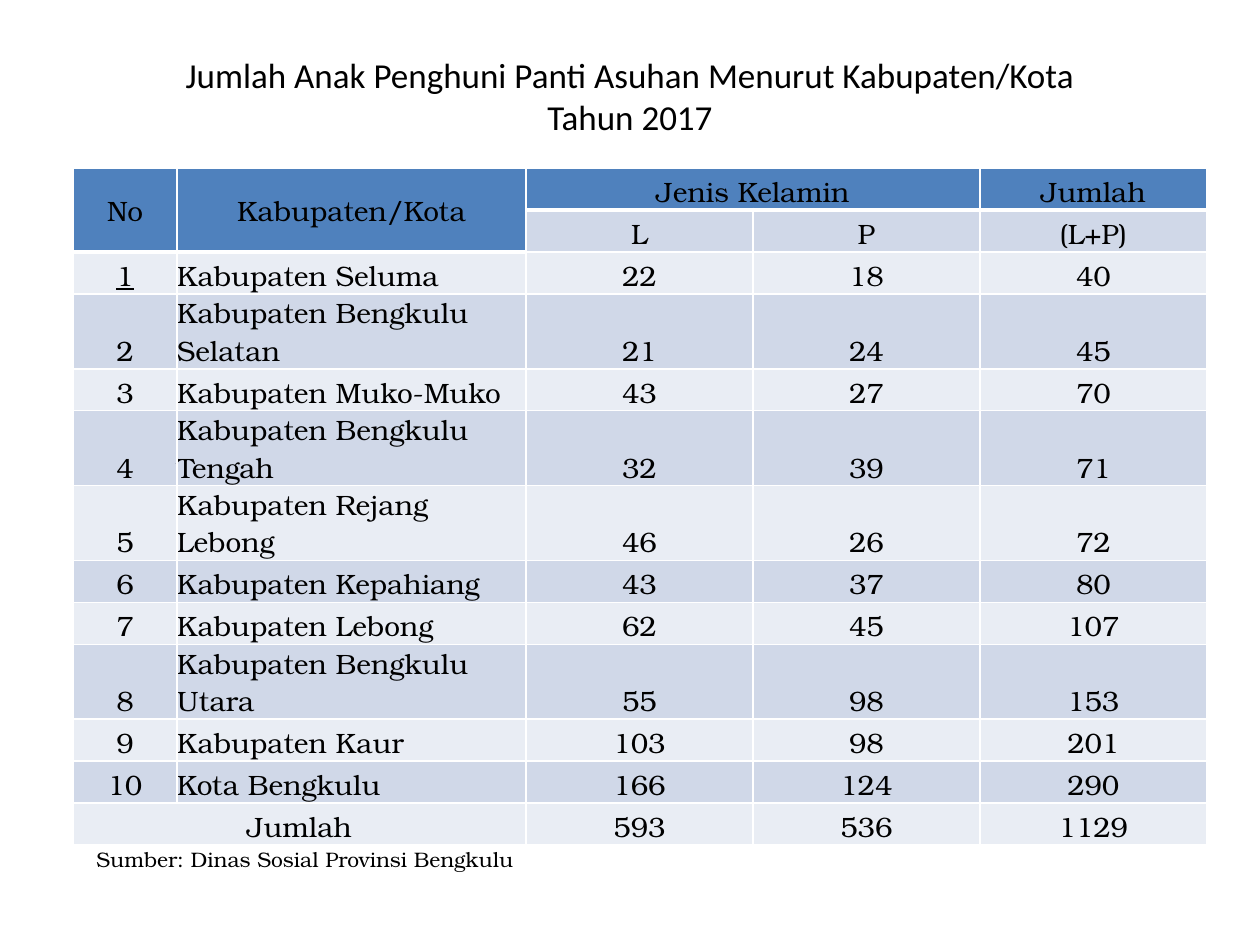
import pptx
import pptx.dml.color
import pptx.enum.text
import pptx.oxml
import pptx.oxml.ns
import pptx.util

PX = 914400 // 126
SLIDE_SIZE = (1260, 945)
COLORS = {"text": "000000", "header": "4F81BD", "dark": "D0D8E8",
          "light": "E9EDF4", "border": "FFFFFF"}
TITLE_FONT, BODY_FONT = "Calibri", "TeX Gyre Bonum"

TITLE = "Jumlah Anak Penghuni Panti Asuhan Menurut Kabupaten/Kota\vTahun 2017"
SOURCE = "Sumber: Dinas Sosial Provinsi Bengkulu"
ROWS = [
    ("No", "Kabupaten/Kota", "Jenis Kelamin", "", "Jumlah"),
    ("", "", "L", "P", "(L+P)"),
    ("1", "Kabupaten Seluma", "22", "18", "40"),
    ("2", "Kabupaten Bengkulu Selatan", "21", "24", "45"),
    ("3", "Kabupaten Muko-Muko", "43", "27", "70"),
    ("4", "Kabupaten Bengkulu Tengah", "32", "39", "71"),
    ("5", "Kabupaten Rejang Lebong", "46", "26", "72"),
    ("6", "Kabupaten Kepahiang", "43", "37", "80"),
    ("7", "Kabupaten Lebong", "62", "45", "107"),
    ("8", "Kabupaten Bengkulu Utara", "55", "98", "153"),
    ("9", "Kabupaten Kaur", "103", "98", "201"),
    ("10", "Kota Bengkulu", "166", "124", "290"),
    ("Jumlah", "", "593", "536", "1129"),
]
MERGES = [((0, 0), (1, 0)), ((0, 1), (1, 1)), ((0, 2), (0, 3)), ((12, 0), (12, 1))]
UNDERLINED = (2, 0)

TITLE_AREA = (63, 38, 1134, 157)
TABLE_AREA = (73, 168, 1134, 648)
SOURCE_AREA = (84, 840, 449, 38)
COLUMN_WIDTHS = (104, 349, 227, 227, 227)
ROW_HEIGHT, TALL_ROW_HEIGHT = 42, 60
LONGEST_SINGLE_LINE = 20

ALIGN = pptx.enum.text.PP_ALIGN
ANCHOR = pptx.enum.text.MSO_ANCHOR


def emu(area):
    return [length * PX for length in area]


def color(name):
    return pptx.dml.color.RGBColor.from_string(COLORS[name])


def format_text(frame, font_name, size, align):
    for para in frame.paragraphs:
        para.alignment = align
        for span in para.runs:
            span.font.name = font_name
            span.font.size = pptx.util.Pt(size)
            span.font.color.rgb = color("text")


def is_header(row, column):
    return row == 0 or (row == 1 and column < 2)


def add_borders(cell, row, column):
    """Draw thin borders, with a thick one between header and body."""
    top = 3 if row and is_header(row - 1, column) else 1
    bottom = 3 if is_header(row, column) else 1
    properties = cell._tc.get_or_add_tcPr()
    for side, width in (("L", 1), ("R", 1), ("T", top), ("B", bottom)):
        properties.append(pptx.oxml.parse_xml(
            f'<a:ln{side} {pptx.oxml.ns.nsdecls("a")} w="{pptx.util.Pt(width)}">'
            f'<a:solidFill><a:srgbClr val="{COLORS["border"]}"/></a:solidFill>'
            f'</a:ln{side}>'))


def fill_cell(cell, row, column, text):
    cell.text = text
    cell.margin_left = cell.margin_right = cell.margin_top = cell.margin_bottom = 0
    header = is_header(row, column)
    cell.vertical_anchor = ANCHOR.MIDDLE if header and column < 2 else ANCHOR.BOTTOM
    align = ALIGN.LEFT if column == 1 and not header else ALIGN.CENTER
    format_text(cell.text_frame, BODY_FONT, 16, align)
    add_borders(cell, row, column)
    cell.fill.solid()
    band = "dark" if row % 2 else "light"
    cell.fill.fore_color.rgb = color("header" if header else band)


def add_title(page):
    title = page.shapes.title
    title.left, title.top, title.width, title.height = emu(TITLE_AREA)
    frame = title.text_frame
    frame.text = TITLE
    frame.word_wrap = True
    frame.vertical_anchor = ANCHOR.MIDDLE
    frame.margin_bottom = 48 * PX
    format_text(frame, TITLE_FONT, 20, ALIGN.CENTER)


def add_children_table(page):
    holder = page.shapes.add_table(len(ROWS), len(COLUMN_WIDTHS), *emu(TABLE_AREA))
    table = holder.table
    for column, width in zip(table.columns, COLUMN_WIDTHS):
        column.width = width * PX
    for row, texts in enumerate(ROWS):
        tall = len(texts[1]) > LONGEST_SINGLE_LINE
        table.rows[row].height = (TALL_ROW_HEIGHT if tall else ROW_HEIGHT) * PX
        for column, text in enumerate(texts):
            fill_cell(table.cell(row, column), row, column, text)
    for first, last in MERGES:
        table.cell(*first).merge(table.cell(*last))
    marked = table.cell(*UNDERLINED).text_frame.paragraphs[0].runs[0]
    marked.font.underline = True
    holder.height = TABLE_AREA[3] * PX


def add_source(page):
    box = page.shapes.add_textbox(*emu(SOURCE_AREA))
    frame = box.text_frame
    frame.text = SOURCE
    frame.word_wrap = False
    frame.auto_size = pptx.enum.text.MSO_AUTO_SIZE.SHAPE_TO_FIT_TEXT
    format_text(frame, BODY_FONT, 12, ALIGN.LEFT)


def main():
    deck = pptx.Presentation()
    deck.slide_width, deck.slide_height = emu(SLIDE_SIZE)
    page = deck.slides.add_slide(deck.slide_layouts.get_by_name("Title Only"))
    add_title(page)
    add_children_table(page)
    add_source(page)
    deck.save("out.pptx")


if __name__ == "__main__":
    main()
